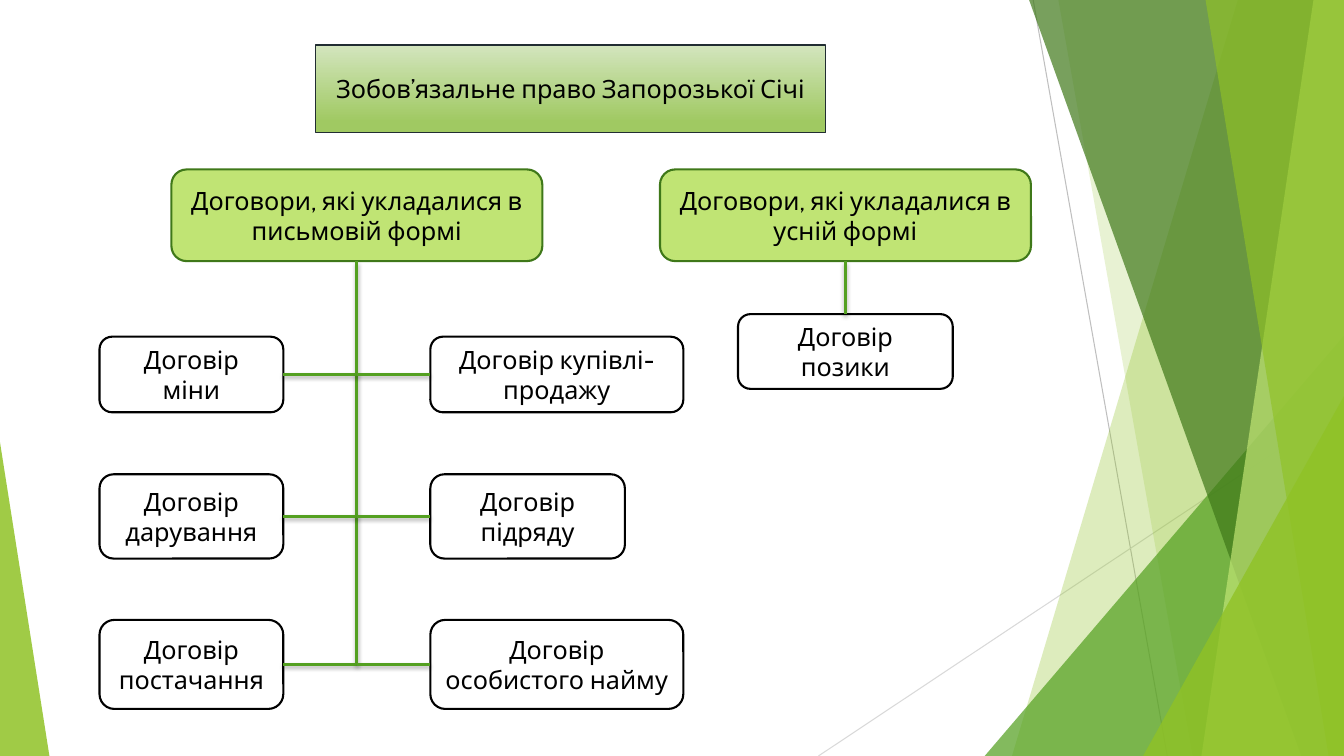
from dataclasses import dataclass

from lxml.etree import SubElement
from pptx import Presentation
from pptx.dml.color import RGBColor
from pptx.enum.shapes import MSO_CONNECTOR, MSO_SHAPE
from pptx.enum.text import MSO_ANCHOR, MSO_AUTO_SIZE, PP_ALIGN
from pptx.oxml.ns import qn
from pptx.shapes.autoshape import Shape
from pptx.shapes.connector import Connector
from pptx.slide import Slide
from pptx.util import Pt

WIDTH, HEIGHT = 960, 540
FONT = "Cabin"
COLORS = {
    "black": "000000",
    "white": "FFFFFF",
    "lime": "90C226",
    "pale lime": "C0E474",
    "green": "54A021",
    "dark green": "3F7819",
    "title top": "D3E5BE",
    "title bottom": "A0C962",
    "title line": "212D32",
    "grey": "BFBFBF",
    "light grey": "D9D9D9",
}
BOTTOM_SITE, RIGHT_SITE, LEFT_SITE, TOP_SITE = 2, 3, 1, 0


@dataclass
class Band:
    """A facet from its slanted left edge to the right edge of the slide."""
    top_x: float
    bottom_x: float
    color: str
    opacity: int


@dataclass
class Triangle:
    """A facet standing on the bottom edge of the slide."""
    left: float
    width: float
    height: float
    apex: float
    color: str
    opacity: int


@dataclass
class Box:
    text: str
    left: float
    top: float
    width: float
    height: float
    fill: str = "white"
    line: str = "black"


@dataclass
class ContractRow:
    top: float
    height: float
    left_text: str
    right_text: str
    right_width: float


FACETS = [
    Band(884.2, 722.9, "lime", 30),
    Band(756, 851.8, "lime", 20),
    Triangle(703.4, 256.6, 300.2, 1, "green", 72),
    Band(735.1, 929.5, "dark green", 70),
    Band(938.2, 858.2, "pale lime", 70),
    Band(861.1, 949, "lime", 65),
    Triangle(816.5, 143.5, 257, 1, "lime", 80),
    Triangle(0, 35.3, 224, 0, "lime", 85),
]
TITLE = Box("Зобов’язальне право Запорозької Січі", 225.4, 32.1, 364.3, 62.6)
WRITTEN = Box("Договори, які укладалися в письмовій формі",
              122.4, 121, 265, 65.5, "pale lime", "dark green")
ORAL = Box("Договори, які укладалися в усній формі",
           471.4, 121, 265, 65.5, "pale lime", "dark green")
LOAN = Box("Договір позики", 527.2, 224.4, 153.4, 53.4)
LEFT_COLUMN, LEFT_WIDTH, RIGHT_COLUMN = 71.1, 131.3, 307.4
ROWS = [
    ContractRow(240.5, 54, "Договір міни", "Договір купівлі-\nпродажу", 180.7),
    ContractRow(338.8, 60.2, "Договір дарування", "Договір підряду", 139),
    ContractRow(442.8, 63.6, "Договір\nпостачання", "Договір особистого найму", 180.7),
]


def rgb(name: str) -> RGBColor:
    return RGBColor.from_string(COLORS[name])


def style_facet(shape: Shape, color: str, opacity: int) -> None:
    shape.shadow.inherit = False
    shape.line.fill.background()
    shape.fill.solid()
    shape.fill.fore_color.rgb = rgb(color)
    color_element = shape._element.spPr.find(".//" + qn("a:srgbClr"))
    SubElement(color_element, qn("a:alpha"), val=str(opacity * 1000))


def add_facet(slide: Slide, facet: Band | Triangle) -> None:
    if isinstance(facet, Band):
        builder = slide.shapes.build_freeform(Pt(facet.top_x), 0)
        corners = [(WIDTH, 0), (WIDTH, HEIGHT), (facet.bottom_x, HEIGHT)]
        builder.add_line_segments([(Pt(x), Pt(y)) for x, y in corners], close=True)
        shape = builder.convert_to_shape()
    else:
        shape = slide.shapes.add_shape(
            MSO_SHAPE.ISOSCELES_TRIANGLE, Pt(facet.left), Pt(HEIGHT - facet.height),
            Pt(facet.width), Pt(facet.height))
        shape.adjustments[0] = facet.apex
    style_facet(shape, facet.color, facet.opacity)


def add_line(slide: Slide, begin: tuple[float, float], end: tuple[float, float],
             color: str, width: float, shadow: bool = False) -> Connector:
    line = slide.shapes.add_connector(
        MSO_CONNECTOR.STRAIGHT, Pt(begin[0]), Pt(begin[1]), Pt(end[0]), Pt(end[1]))
    line.line.color.rgb = rgb(color)
    line.line.width = Pt(width)
    effects = SubElement(line._element.spPr, qn("a:effectLst"))
    if shadow:
        outer = SubElement(effects, qn("a:outerShdw"), blurRad=str(Pt(3)),
                           dist=str(Pt(2)), dir="5400000", rotWithShape="0")
        shade = SubElement(outer, qn("a:srgbClr"), val=COLORS["black"])
        SubElement(shade, qn("a:alpha"), val="35000")
    return line


def write_text(shape: Shape, text: str) -> None:
    frame = shape.text_frame
    frame.text = text
    frame.word_wrap = True
    frame.auto_size = MSO_AUTO_SIZE.NONE
    frame.vertical_anchor = MSO_ANCHOR.MIDDLE
    for paragraph in frame.paragraphs:
        paragraph.alignment = PP_ALIGN.CENTER
        for run in paragraph.runs:
            run.font.name = FONT
            run.font.size = Pt(18)
            run.font.color.rgb = rgb("black")


def add_box(slide: Slide, box: Box) -> Shape:
    shape = slide.shapes.add_shape(MSO_SHAPE.ROUNDED_RECTANGLE, Pt(box.left),
                                   Pt(box.top), Pt(box.width), Pt(box.height))
    shape.shadow.inherit = False
    shape.fill.solid()
    shape.fill.fore_color.rgb = rgb(box.fill)
    shape.line.color.rgb = rgb(box.line)
    shape.line.width = Pt(1.5)
    write_text(shape, box.text)
    return shape


def format_title(slide: Slide) -> None:
    title = slide.shapes.title
    title.left, title.top = Pt(TITLE.left), Pt(TITLE.top)
    title.width, title.height = Pt(TITLE.width), Pt(TITLE.height)
    geometry = SubElement(title._element.spPr, qn("a:prstGeom"), prst="roundRect")
    SubElement(geometry, qn("a:avLst"))
    title.fill.gradient()
    title.fill.gradient_angle = 270
    stops = zip(title.fill.gradient_stops, [("title top", 0), ("title bottom", 0.88)])
    for stop, (color, position) in stops:
        stop.color.rgb = rgb(color)
        stop.position = position
    title.line.color.rgb = rgb("title line")
    title.line.width = Pt(1)
    write_text(title, TITLE.text)


def add_written_contracts(slide: Slide) -> None:
    """Draw the written form, its trunk and the contracts on both sides."""
    written = add_box(slide, WRITTEN)
    trunk_x = (LEFT_COLUMN + LEFT_WIDTH + RIGHT_COLUMN) / 2
    trunk_end = (trunk_x, ROWS[-1].top + ROWS[-1].height / 2)
    trunk_start = (trunk_x, WRITTEN.top + WRITTEN.height)
    trunk = add_line(slide, trunk_start, trunk_end, "green", 2, shadow=True)
    trunk.begin_connect(written, BOTTOM_SITE)
    for row in ROWS:
        joint = (trunk_x, row.top + row.height / 2)
        sides = [
            (Box(row.left_text, LEFT_COLUMN, row.top, LEFT_WIDTH, row.height), RIGHT_SITE),
            (Box(row.right_text, RIGHT_COLUMN, row.top, row.right_width, row.height), LEFT_SITE),
        ]
        for box, site in sides:
            contract = add_box(slide, box)
            branch = add_line(slide, joint, joint, "green", 2, shadow=True)
            branch.end_connect(contract, site)


def add_oral_contract(slide: Slide) -> None:
    oral, loan = add_box(slide, ORAL), add_box(slide, LOAN)
    link = add_line(slide, (0, 0), (0, 0), "green", 2, shadow=True)
    link.begin_connect(oral, BOTTOM_SITE)
    link.end_connect(loan, TOP_SITE)


def main() -> None:
    presentation = Presentation()
    presentation.slide_width, presentation.slide_height = Pt(WIDTH), Pt(HEIGHT)
    slide = presentation.slides.add_slide(presentation.slide_layouts.get_by_name("Title Only"))
    add_line(slide, (738, 0), (833.8, HEIGHT), "grey", 0.75)
    add_line(slide, (WIDTH, 290.2), (584.6, HEIGHT), "light grey", 0.75)
    for facet in FACETS:
        add_facet(slide, facet)
    format_title(slide)
    add_written_contracts(slide)
    add_oral_contract(slide)
    presentation.save("out.pptx")


if __name__ == "__main__":
    main()
